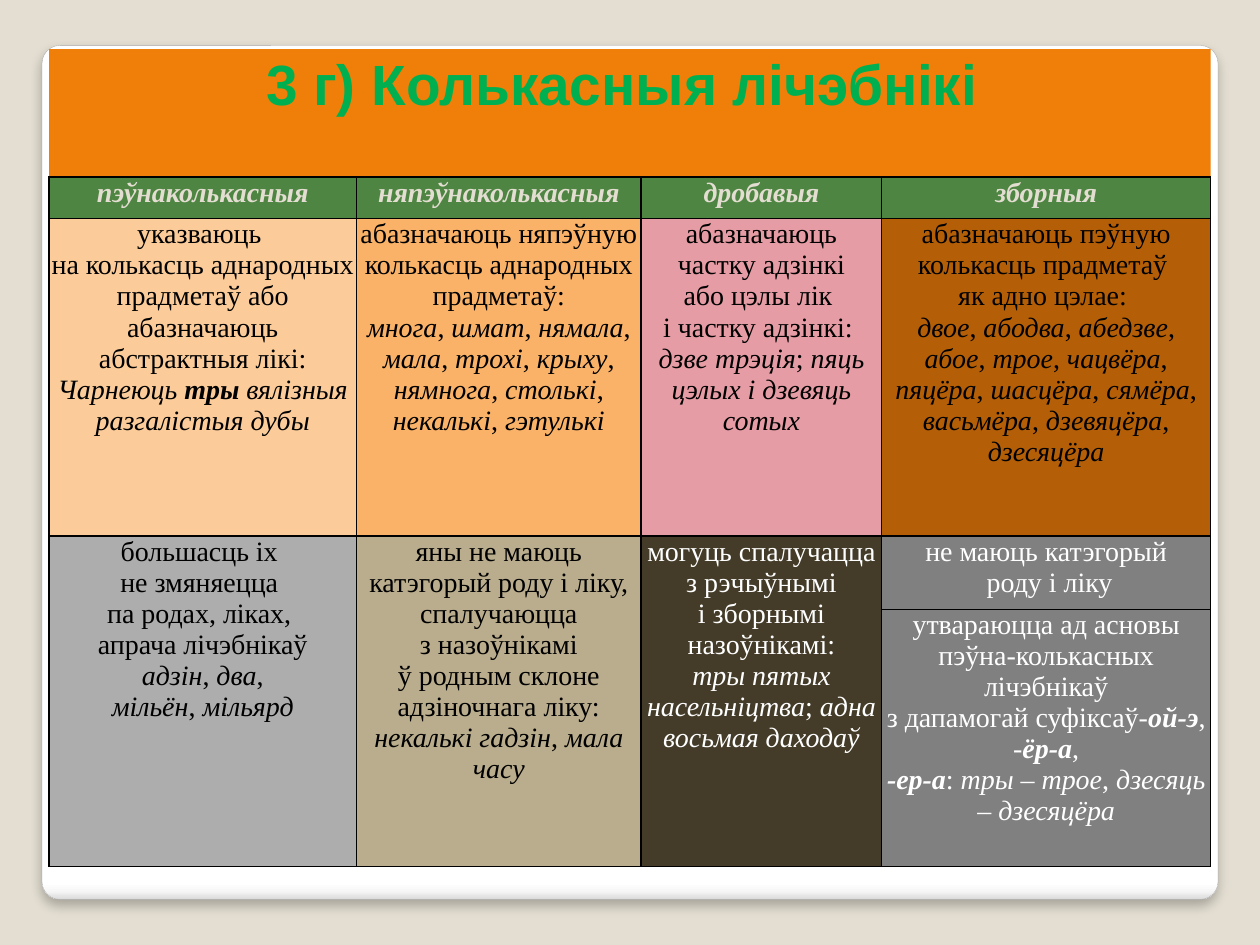
from pptx import Presentation
from pptx.dml.color import RGBColor
from pptx.enum.shapes import MSO_SHAPE as Shape
from pptx.enum.text import MSO_ANCHOR as Anchor, MSO_AUTO_SIZE as AutoSize, PP_ALIGN as Align
from pptx.oxml import parse_xml
from pptx.oxml.ns import nsdecls
from pptx.util import Pt

COLORS = {
    "background": "E3DED1", "panel_line": "A4A4A4", "border": "000000",
    "banner": "F07F09", "title": "00B050", "header": "4E8542", "header_text": "E3DED1",
    "black": "000000", "white": "FFFFFF",
    "peach": "FBCC9A", "apricot": "F9B268", "pink": "E69CA4", "brown": "B45F07",
    "silver": "ADADAD", "sand": "BAAD8D", "umber": "443C29", "gray": "808080",
}
PANEL_STOPS = [(0, "FFFFFF"), (98, "FFFFFF"), (99, "F7F7F7"), (100, "DADADA")]
COLUMN_WIDTHS = [175.7, 162.7, 137.5, 187.9]
ROW_HEIGHTS = [23.8, 181.4, 41.8, 146.9]
HEADERS = ["пэўнаколькасныя", "няпэўнаколькасныя", "дробавыя", "зборныя"]

# (row, column, rows spanned, fill, text colour, paragraphs); _ marks italics, * marks bold
BODY = [
    (1, 0, 1, "peach", "black", [
        "указваюць ",
        "на колькасць аднародных прадметаў або абазначаюць абстрактныя лікі: "
        "_Чарнеюць *тры* вялізныя разгалістыя дубы_"]),
    (1, 1, 1, "apricot", "black", [
        "абазначаюць няпэўную колькасць аднародных прадметаў:",
        "_многа_,_ шмат_,_ нямала_,_ мала_,_ трохі_, _крыху_,_ нямнога_,"
        "_ столькі_,_ некалькі_,_ гэтулькі_"]),
    (1, 2, 1, "pink", "black", [
        "абазначаюць частку адзінкі",
        "або цэлы лік ",
        "і частку адзінкі: ",
        "_дзве трэція_;_ пяць цэлых і дзевяць сотых_"]),
    (1, 3, 1, "brown", "black", [
        "абазначаюць пэўную колькасць прадметаў ",
        "як адно цэлае: ",
        "_двое_,_ абодва_,_ абедзве_,_ абое_,_ трое_,_ чацвёра_,_ пяцёра_,"
        "_ шасцёра_,_ сямёра_, _васьмёра_,_ дзевяцёра_, _дзесяцёра_"]),
    (2, 0, 2, "silver", "black", [
        "большасць іх ",
        "не змяняецца ",
        "па родах, ліках, ",
        "апрача лічэбнікаў",
        "_адзін_,_ два_,",
        "_мільён_, _мільярд_"]),
    (2, 1, 2, "sand", "black", [
        "яны не маюць катэгорый роду і ліку, спалучаюцца",
        "з назоўнікамі",
        "ў родным склоне адзіночнага ліку: _некалькі гадзін_,_ мала часу_"]),
    (2, 2, 2, "umber", "white", [
        "могуць спалучацца",
        "з рэчыўнымі",
        "і зборнымі назоўнікамі:",
        "_тры пятых насельніцтва_;_ адна восьмая даходаў_"]),
    (2, 3, 1, "gray", "white", ["не маюць катэгорый", " роду і ліку"]),
    (3, 3, 1, "gray", "white", [
        "утвараюцца ад асновы пэўна-колькасных лічэбнікаў",
        "з дапамогай суфіксаў-_*ой-э*_, -_*ёр-а*_,",
        "_*-ер-а*_:_ тры – трое_, _дзесяць – дзесяцёра_"]),
]


def rgb(name):
    return RGBColor.from_string(COLORS[name])


def set_all(target, values):
    for name, value in values.items():
        setattr(target, name, value)


def add_panel(slide, box):
    panel = slide.shapes.add_shape(Shape.ROUNDED_RECTANGLE, *box)
    panel.adjustments[0] = 0.021
    panel.line.color.rgb = rgb("panel_line")
    panel.line.width = Pt(0.16)
    # Gradient and soft shadow
    properties = panel._element.spPr
    stops = "".join(f'<a:gs pos="{position * 1000}"><a:srgbClr val="{color}"/></a:gs>'
                    for position, color in PANEL_STOPS)
    properties.insert(2, parse_xml(
        f'<a:gradFill {nsdecls("a")}><a:gsLst>{stops}</a:gsLst>'
        '<a:lin ang="5400000" scaled="0"/></a:gradFill>'))
    properties.append(parse_xml(
        f'<a:effectLst {nsdecls("a")}><a:outerShdw blurRad="{Pt(6)}" dist="{Pt(4)}" '
        'dir="5400000" algn="tl" rotWithShape="0"><a:srgbClr val="000000">'
        '<a:alpha val="25000"/></a:srgbClr></a:outerShdw></a:effectLst>'))
    # Panel goes behind the title placeholder
    slide.shapes._spTree.insert(2, panel._element)


def add_title(slide, box, text):
    title = slide.shapes.title
    set_all(title, dict(zip(("left", "top", "width", "height"), box)))
    title.fill.solid()
    title.fill.fore_color.rgb = rgb("banner")
    frame = title.text_frame
    frame.text = text
    set_all(frame, {"vertical_anchor": Anchor.TOP, "auto_size": AutoSize.NONE,
                    "margin_top": 0, "margin_bottom": 0, "word_wrap": True})
    paragraph = frame.paragraphs[0]
    paragraph.alignment = Align.CENTER
    font = paragraph.runs[0].font
    set_all(font, {"name": "Arial", "size": Pt(32.4), "bold": True})
    font.color.rgb = rgb("title")


def add_borders(cell):
    properties = cell._tc.get_or_add_tcPr()
    for side in "LRTB":
        properties.append(parse_xml(
            f'<a:ln{side} {nsdecls("a")} w="{Pt(1)}"><a:solidFill>'
            f'<a:srgbClr val="{COLORS["border"]}"/></a:solidFill></a:ln{side}>'))


def write_cell(cell, fill, color, lines):
    cell.fill.solid()
    cell.fill.fore_color.rgb = rgb(fill)
    set_all(cell, {"margin_left": Pt(1.5), "margin_right": Pt(1.5),
                   "margin_top": 0, "margin_bottom": 0, "vertical_anchor": Anchor.TOP})
    frame = cell.text_frame
    for number, line in enumerate(lines):
        paragraph = frame.add_paragraph() if number else frame.paragraphs[0]
        paragraph.alignment = Align.CENTER
        for i, stretch in enumerate(line.split("_")):
            for j, words in enumerate(stretch.split("*")):
                if words:
                    run = paragraph.add_run()
                    run.text = words
                    set_all(run.font, {"name": "Times New Roman", "size": Pt(16),
                                       "italic": i % 2 == 1, "bold": j % 2 == 1})
                    run.font.color.rgb = rgb(color)


def add_numeral_table(slide, box):
    table = slide.shapes.add_table(len(ROW_HEIGHTS), len(COLUMN_WIDTHS), *box).table
    for column, width in zip(table.columns, COLUMN_WIDTHS):
        column.width = Pt(width)
    for row, height in zip(table.rows, ROW_HEIGHTS):
        row.height = Pt(height)
    for cell in table.iter_cells():
        add_borders(cell)
    # Header row
    for column, header in enumerate(HEADERS):
        write_cell(table.cell(0, column), "header", "header_text", [f"_*{header}*_"])
    # Meanings, examples and grammar
    for row, column, span, fill, color, lines in BODY:
        cell = table.cell(row, column)
        if span > 1:
            cell.merge(table.cell(row + span - 1, column))
        write_cell(cell, fill, color, lines)


def main():
    deck = Presentation()
    set_all(deck, {"slide_width": Pt(720), "slide_height": Pt(540)})
    slide = deck.slides.add_slide(deck.slide_layouts[5])
    slide.background.fill.solid()
    slide.background.fill.fore_color.rgb = rgb("background")

    left, width = Pt(28), Pt(sum(COLUMN_WIDTHS))
    add_panel(slide, (Pt(24), Pt(26), Pt(672), Pt(488)))
    add_title(slide, (left, Pt(28), width, Pt(78.5)), "3 г) Колькасныя лічэбнікі ")
    add_numeral_table(slide, (left, Pt(101.2), width, Pt(sum(ROW_HEIGHTS))))
    deck.save("out.pptx")


if __name__ == "__main__":
    main()
